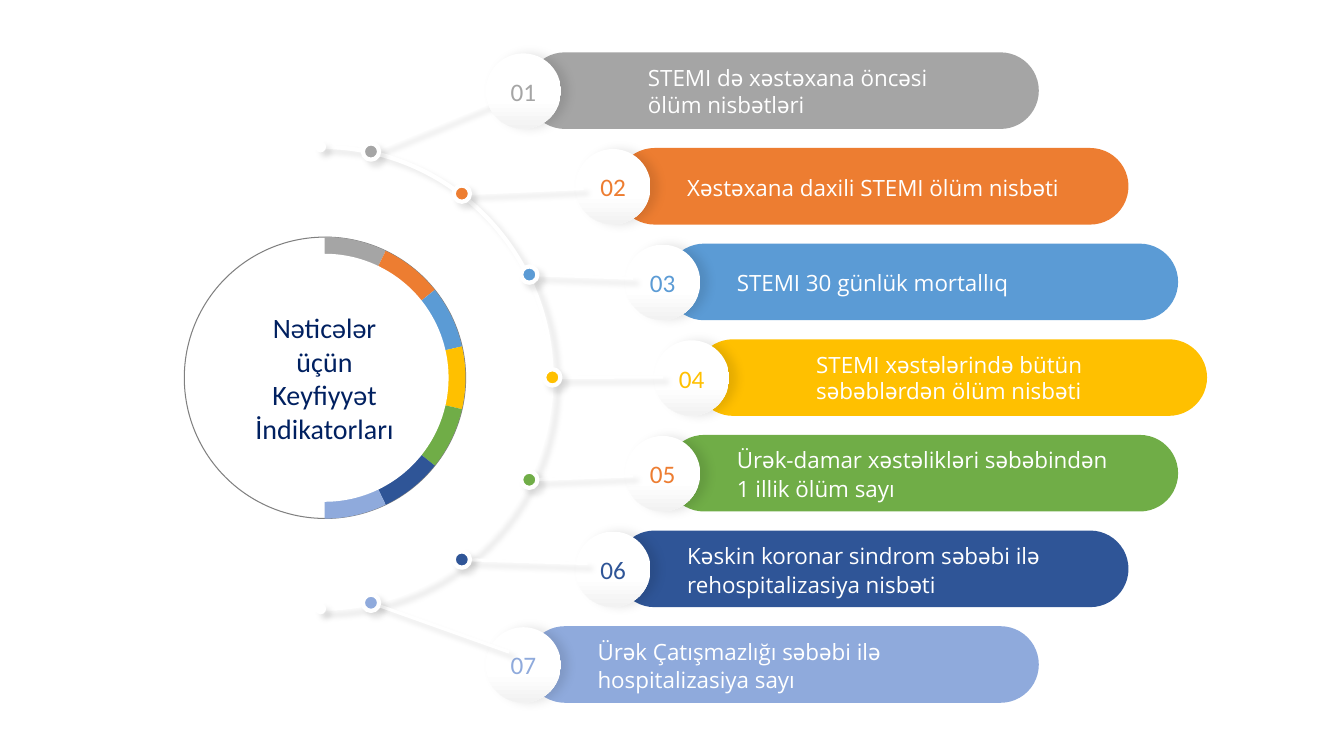
from dataclasses import dataclass
from math import cos, radians, sin, tan

from lxml.etree import SubElement
from pptx import Presentation
from pptx.dml.color import RGBColor
from pptx.enum.shapes import MSO_CONNECTOR as Link, MSO_SHAPE as Preset
from pptx.enum.text import MSO_ANCHOR as Anchor, PP_ALIGN as Align
from pptx.oxml.ns import qn
from pptx.util import Cm, Pt

COLOURS = {
    "white": "FFFFFF", "mist": "F2F2F2", "outline": "808080", "navy": "002060",
    "grey": "A5A5A5", "orange": "ED7D31", "sky": "5B9BD5", "yellow": "FFC000",
    "green": "70AD47", "blue": "2F5597", "lavender": "8FAADC",
}
CENTRE_X, CENTRE_Y = 8.18, 9.52
RING_RADIUS = 3.55
ARC_X, ARC_RADIUS = 8.08, 5.82
BAR_TOP, BAR_STEP, BAR_WIDTH, BAR_HEIGHT = 1.32, 2.41, 12.91, 1.93
BADGE_SIZE = 1.9
DOT_SIZE = 0.41


@dataclass
class Indicator:
    label: str
    colour: str
    bar_left: float
    dot: tuple[float, float]
    spoke_end: tuple[float, float]
    text_height: float = 1.47
    indent: float = 0
    spacing: float = 1.07
    number_colour: str = ""


@dataclass
class Shadow:
    blur: float
    distance: float
    angle: int


SOFT = Shadow(4, 5, 45)
SIDE = Shadow(7, 5, 0)

INDICATORS = [
    Indicator("STEMI də xəstəxana öncəsi ölüm nisbətləri", "grey", 13.27,
              (9.35, 3.82), (12.34, 2.59), 1.37, 1.27, 1.0),
    Indicator("Xəstəxana daxili STEMI ölüm nisbəti", "orange", 15.53,
              (11.64, 4.88), (14.71, 4.75), 0.71),
    Indicator("STEMI 30 günlük mortallıq", "sky", 16.78,
              (13.34, 6.92), (15.95, 7.01), 0.71),
    Indicator("STEMI xəstələrində bütün səbəblərdən ölüm nisbəti", "yellow", 17.51,
              (13.92, 9.51), (16.71, 9.5), 1.37, 1.27, 1.0),
    Indicator("Ürək-damar xəstəlikləri səbəbindən 1 illik ölüm sayı", "green", 16.78,
              (13.34, 12.09), (15.95, 11.99), number_colour="orange"),
    Indicator("Kəskin koronar sindrom səbəbi ilə rehospitalizasiya nisbəti", "blue", 15.53,
              (11.64, 14.1), (14.81, 14.2)),
    Indicator("Ürək Çatışmazlığı səbəbi ilə hospitalizasiya sayı", "lavender", 13.27,
              (9.35, 15.19), (12.83, 16.43)),
]


def rgb(name: str) -> RGBColor:
    return RGBColor.from_string(COLOURS[name])


def paint(shape, fill: str = "", line: str = "", weight: float = 0) -> None:
    """Set fill and line; an empty name means none."""
    shape.shadow.inherit = False
    if fill:
        shape.fill.solid()
        shape.fill.fore_color.rgb = rgb(fill)
    else:
        shape.fill.background()
    if line:
        shape.line.color.rgb = rgb(line)
        shape.line.width = Pt(weight)
    else:
        shape.line.fill.background()


def cast_shadow(shape, shadow: Shadow) -> None:
    properties = shape._element.spPr
    effects = properties.find(qn("a:effectLst"))
    if effects is None:
        effects = SubElement(properties, qn("a:effectLst"))
    outer = SubElement(effects, qn("a:outerShdw"), blurRad=str(Pt(shadow.blur)),
                       dist=str(Pt(shadow.distance)), dir=str(shadow.angle * 60000),
                       algn="ctr", rotWithShape="0")
    black = SubElement(outer, qn("a:srgbClr"), val="000000")
    SubElement(black, qn("a:alpha"), val="10000")


def add_circle(page, x: float, y: float, size: float):
    """Add a circle centred on x, y."""
    return page.shapes.add_shape(Preset.OVAL, Cm(x - size / 2), Cm(y - size / 2),
                                 Cm(size), Cm(size))


def write(shape, text: str, font: str, size: float, colour: str, margin: float = 0):
    frame = shape.text_frame
    frame.text = text
    frame.word_wrap = True
    frame.vertical_anchor = Anchor.MIDDLE
    frame.margin_left = frame.margin_right = Cm(margin)
    frame.margin_top = frame.margin_bottom = Cm(margin / 2)
    para = frame.paragraphs[0]
    span = para.runs[0]
    span.font.name = font
    span.font.size = Pt(size)
    span.font.color.rgb = rgb(colour)
    return para


def curve_points(x: float, radius: float, start: float, end: float) -> list:
    """Start, two handles and end of one arc, in degrees clockwise from the top."""
    first, last = radians(start), radians(end)
    reach = 4 / 3 * tan((last - first) / 4)
    spots = [(sin(angle) + pull * cos(angle), cos(angle) - pull * sin(angle))
             for angle, pull in ((first, 0), (first, reach), (last, -reach), (last, 0))]
    return [(Cm(x + radius * across), Cm(CENTRE_Y - radius * up)) for across, up in spots]


def draw_curves(page, points: list, curves: int, closed: bool):
    """Draw an outline whose first segments, three points each, are curves."""
    builder = page.shapes.build_freeform(*points[0])
    builder.add_line_segments(points[1:], close=closed)
    shape = builder.convert_to_shape()
    segments = list(shape._element.iter(qn("a:lnTo")))
    for start in range(0, curves * 3, 3):
        trio = segments[start:start + 3]
        bezier = SubElement(trio[0].getparent(), qn("a:cubicBezTo"))
        trio[0].addprevious(bezier)
        for segment in trio:
            bezier.append(segment[0])
            segment.getparent().remove(segment)
    return shape


def draw_arc(page) -> None:
    upper = curve_points(ARC_X, ARC_RADIUS, 0, 90)
    lower = curve_points(ARC_X, ARC_RADIUS, 90, 180)
    arc = draw_curves(page, upper + lower[1:], 2, False)
    paint(arc, line="white", weight=3)
    cast_shadow(arc, SOFT)
    for y in (CENTRE_Y - ARC_RADIUS, CENTRE_Y + ARC_RADIUS):
        tip = add_circle(page, ARC_X, y, 0.28)
        paint(tip, "white")
        cast_shadow(tip, SOFT)


def draw_wedges(page) -> None:
    sweep = 180 / len(INDICATORS)
    for index, item in enumerate(INDICATORS):
        rim = curve_points(CENTRE_X, RING_RADIUS, index * sweep, (index + 1) * sweep)
        paint(draw_curves(page, [*rim, (Cm(CENTRE_X), Cm(CENTRE_Y))], 1, True), item.colour)


def draw_bar(page, index: int, item: Indicator) -> None:
    top = BAR_TOP + index * BAR_STEP
    middle = top + BAR_HEIGHT / 2
    bar = page.shapes.add_shape(Preset.ROUNDED_RECTANGLE, Cm(item.bar_left), Cm(top),
                                Cm(BAR_WIDTH), Cm(BAR_HEIGHT))
    bar.adjustments[0] = 0.5
    paint(bar, item.colour)

    badge = add_circle(page, item.bar_left - 0.08, middle + 0.01, BADGE_SIZE)
    paint(badge)
    badge.fill.gradient()
    badge.fill.gradient_angle = 270
    for stop, (position, colour) in zip(badge.fill.gradient_stops,
                                        [(0.61, "white"), (1, "mist")]):
        stop.position = position
        stop.color.rgb = rgb(colour)
    cast_shadow(badge, SIDE)
    number = write(badge, f"{index + 1:02}", "Calibri", 18, item.number_colour or item.colour)
    number.alignment = Align.CENTER

    box = page.shapes.add_textbox(Cm(item.bar_left + 1.79), Cm(middle - item.text_height / 2),
                                  Cm(9.55), Cm(item.text_height))
    para = write(box, item.label, "Open Sans", 16, "white")
    para.line_spacing = item.spacing
    if item.indent:
        para._p.get_or_add_pPr().set("marL", str(Cm(item.indent)))


def draw_spoke(page, item: Indicator) -> None:
    ends = [Cm(value) for value in (*item.dot, *item.spoke_end)]
    spoke = page.shapes.add_connector(Link.STRAIGHT, *ends)
    spoke.line.color.rgb = rgb("white")
    spoke.line.width = Pt(2.25)
    cast_shadow(spoke, SOFT)


def draw_dot(page, item: Indicator) -> None:
    dot = add_circle(page, *item.dot, DOT_SIZE)
    paint(dot, item.colour, "white", 3)
    cast_shadow(dot, SOFT)


def main() -> None:
    deck = Presentation()
    deck.slide_width, deck.slide_height = Cm(33.87), Cm(19.05)
    page = deck.slides.add_slide(deck.slide_layouts[6])

    paint(add_circle(page, CENTRE_X + 0.01, CENTRE_Y, 7.09), line="outline", weight=0.75)
    draw_spoke(page, INDICATORS[0])
    draw_arc(page)
    draw_wedges(page)
    for index, item in enumerate(INDICATORS):
        draw_bar(page, index, item)
    for item in INDICATORS[1:]:
        draw_spoke(page, item)
    for item in INDICATORS:
        draw_dot(page, item)

    hub = add_circle(page, CENTRE_X, CENTRE_Y, 6.25)
    paint(hub, "white")
    title = write(hub, "Nəticələr üçün Keyfiyyət İndikatorları", "Calibri", 20, "navy", 0.25)
    title.alignment = Align.CENTER
    deck.save("out.pptx")


if __name__ == "__main__":
    main()
